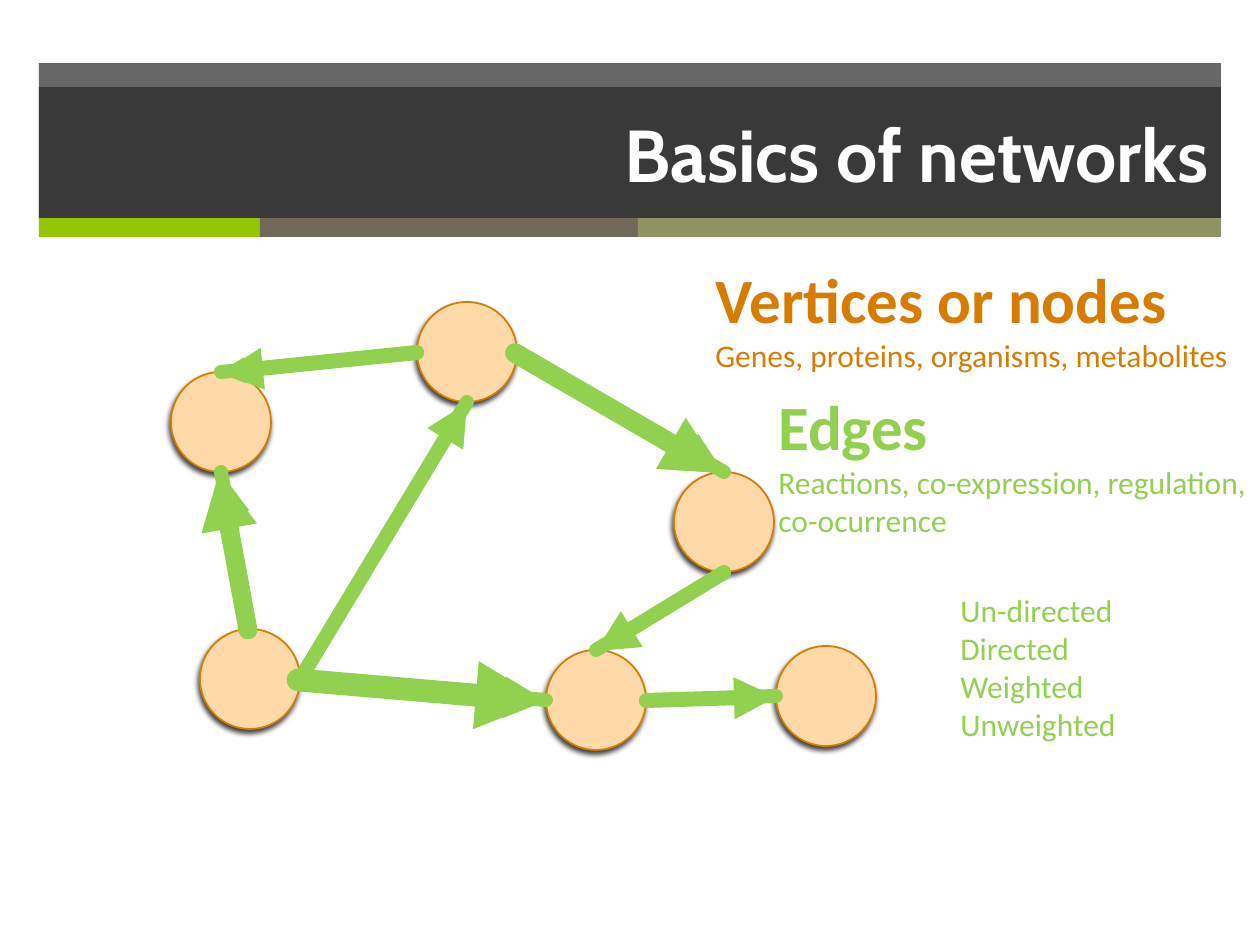
import pptx
import pptx.util
import pptx.dml.color
import pptx.enum.shapes
import pptx.enum.text
import pptx.oxml
import pptx.oxml.ns

THEME = {
    "dark": "262626", "white": "FFFFFF", "lime": "94C600", "brown": "71685A",
    "olive": "909465", "peach": "FFD9A7", "orange": "D77C01", "green": "92D050",
    "head": 42, "large": 36, "small": 18, "title": "Cabin", "body": "Calibri",
}
TITLE = "Basics of networks"
BANDS = [(39, 63, 1182, 156), (39, 87, 1182, 133)]
STRIPES = [("lime", 278), ("brown", 378), ("olive", 526)]
STRIPES[0] = ("lime", 1182 - 378 - 583)
STRIPES[2] = ("olive", 583)
NOTES = [
    ((703, 254, 542, 127), "orange", True, "Vertices or nodes",
     ["Genes, proteins, organisms, metabolites"]),
    ((766, 381, 503, 165), "green", True, "Edges",
     ["Reactions, co-expression, regulation, co-ocurrence"]),
    ((948, 585, 183, 165), "green", False, None,
     ["Un-directed", "Directed", "Weighted", "Unweighted"]),
]
SIZE = 100
NODES = {"A": (171, 372), "B": (417, 302), "C": (200, 629),
         "D": (674, 472), "E": (546, 650), "F": (776, 646)}
SIDES = {"top": (50, 0), "left": (0, 50), "bottom": (50, 100), "right": (100, 50)}
EDGES = [
    ("A", "top", "B", "left", 5),
    ("D", "top", "B", "right", 11.25),
    ("A", "bottom", "C", "top", 10.75),
    ("B", "bottom", "C", "right", 1.75),
    ("E", "left", "C", "right", 13),
    ("F", "left", "E", "right", 3),
    ("E", "top", "D", "bottom", 1),
]
WIDTH = 8
LAYERS = [(0, 0, False, False), (0, 1, True, False), (-2, 1, True, True)]
SCALE = 914400 / 126
KIND = pptx.enum.shapes.MSO_SHAPE
ALIGN = pptx.enum.text.PP_ALIGN


def px(*nums):
    return [round(num * SCALE) for num in nums]


def color(name):
    return pptx.dml.color.RGBColor.from_string(THEME[name])


def add(parent, tag, **attrs):
    node = pptx.oxml.parse_xml(f"<a:{tag} {pptx.oxml.ns.nsdecls('a')}/>")
    for key, value in attrs.items():
        node.set(key, str(value))
    parent.append(node)
    return node


def shape(kind, box, fill):
    item = slide.shapes.add_shape(kind, *px(*box))
    item.shadow.inherit = False
    item.fill.solid()
    item.fill.fore_color.rgb = color(fill)
    item.line.fill.background()
    return item


def style(para, size, tint, face, bold):
    for run in para.runs:
        run.font.size = pptx.util.Pt(THEME[size])
        run.font.name = THEME[face]
        run.font.bold = bold
        run.font.color.rgb = color(tint)


def banner():
    for box in BANDS:
        band = shape(KIND.RECTANGLE, box, "dark")
        tone = band.fill._xPr.find(".//" + pptx.oxml.ns.qn("a:srgbClr"))
        add(tone, "alpha", val=70000)
    left = 39
    for fill, width in STRIPES:
        shape(KIND.RECTANGLE, (left, 218, width, 19), fill)
        left += width
    frame = band.text_frame
    frame.text = TITLE
    frame.vertical_anchor = pptx.enum.text.MSO_ANCHOR.MIDDLE
    frame.paragraphs[0].alignment = ALIGN.RIGHT
    style(frame.paragraphs[0], "head", "white", "title", True)


def note(box, tint, wrap, head, lines):
    frame = slide.shapes.add_textbox(*px(*box)).text_frame
    frame.text = "\n".join(([head] if head else []) + lines)
    frame.word_wrap = wrap
    frame.auto_size = pptx.enum.text.MSO_AUTO_SIZE.SHAPE_TO_FIT_TEXT
    for spot, para in enumerate(frame.paragraphs):
        big = bool(head) and spot == 0
        style(para, "large" if big else "small", tint, "body", big)


def circle(left, top):
    item = shape(KIND.OVAL, (left, top, SIZE, SIZE), "peach")
    item.line.color.rgb = color("orange")
    item.line.width = pptx.util.Pt(1)
    effect = item._element.spPr.find(pptx.oxml.ns.qn("a:effectLst"))
    shade = add(effect, "outerShdw", blurRad=pptx.util.Pt(3),
                dist=pptx.util.Pt(2), dir=110 * 60000, rotWithShape=0)
    add(add(shade, "srgbClr", val="000000"), "alpha", val=75000)


def point(node, side, dx, dy):
    (left, top), (x, y) = NODES[node], SIDES[side]
    return px(left + x + dx, top + y + dy)


def layer(dx, dy, arrow, vary):
    group = slide.shapes.add_group_shape()
    for start, side, end, face, weight in EDGES:
        line = group.shapes.add_connector(
            pptx.enum.shapes.MSO_CONNECTOR.STRAIGHT,
            *point(start, side, dx, dy), *point(end, face, dx, dy))
        line.line.color.rgb = color("green")
        line.line.width = pptx.util.Pt(weight if vary else WIDTH)
        stroke = line.line._get_or_add_ln()
        stroke.set("cap", "rnd")
        if arrow:
            add(stroke, "headEnd", type="triangle")
        add(line._element.spPr, "effectLst")


deck = pptx.Presentation()
deck.slide_width, deck.slide_height = px(1260, 945)
slide = deck.slides.add_slide(deck.slide_layouts[6])
banner()
for spot in NODES.values():
    circle(*spot)
for item in NOTES:
    note(*item)
for item in LAYERS:
    layer(*item)
deck.save("out.pptx")
